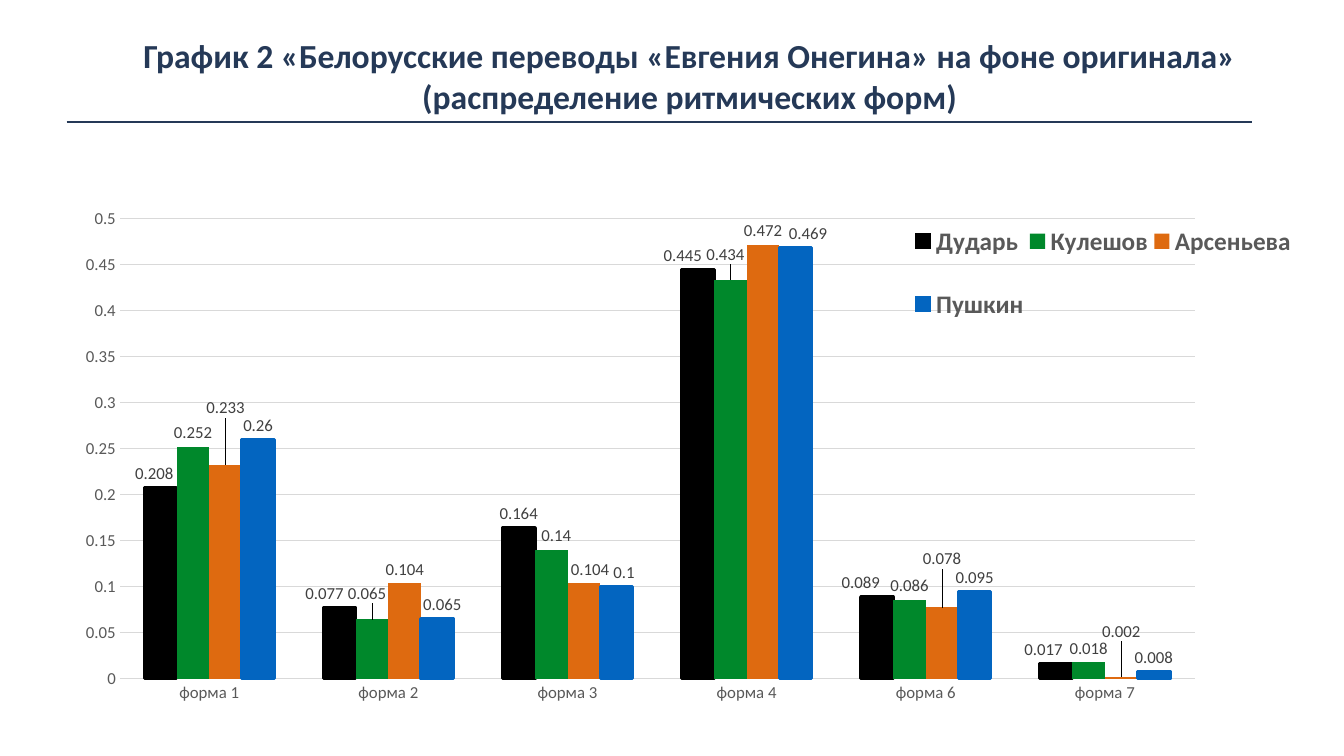
from pptx import Presentation, oxml, util as u
from pptx.chart.data import CategoryChartData
from pptx.dml.color import RGBColor
from pptx.enum import chart as ce, shapes, text
from pptx.oxml import ns

INK = {"navy": "253957", "black": "000000", "green": "00882B",
       "orange": "DE6A10", "blue": "0365C0", "grid": "D9D9D9",
       "axis": "595959", "label": "404040"}
HEAD = ("График 2 «Белорусские переводы «Евгения Онегина» на фоне оригинала»",
        "(распределение ритмических форм)")
FORMS = [f"форма {n}" for n in (1, 2, 3, 4, 6, 7)]
ROWS = (
    ("Дударь", "black", True, (0.208, 0.077, 0.164, 0.445, 0.089, 0.017)),
    ("Кулешов", "green", False, (0.252, 0.065, 0.14, 0.434, 0.086, 0.018)),
    ("Арсеньева", "orange", False, (0.233, 0.104, 0.104, 0.472, 0.078, 0.002)),
    ("Пушкин", "blue", True, (0.26, 0.065, 0.1, 0.469, 0.095, 0.008)),
)
MOVES = {
    "Дударь": {0: (-0.005, 0), 1: (-0.012, 0), 3: (-0.012, 0),
               4: (-0.013, 0), 5: (-0.01, 0)},
    "Кулешов": {1: (-0.004, -0.02), 2: (0.004, 0), 3: (-0.004, -0.02)},
    "Арсеньева": {0: (0, -0.075), 2: (0.005, 0), 4: (0, -0.06),
                  5: (0, -0.055)},
    "Пушкин": {1: (0.004, 0), 2: (0.006, 0), 3: (0.01, 0)},
}


def put(obj, **vals):
    """Set each named attribute on the object."""
    for key, val in vals.items():
        setattr(obj, key, val)


def inch(*nums):
    """Turn plain numbers into lengths."""
    return [u.Inches(n) for n in nums]


def tint(name):
    """Look up a colour by name."""
    return RGBColor.from_string(INK[name])


def style(font, size, ink, bold=False):
    """Format a font."""
    put(font, size=u.Pt(size), bold=bold, name="Calibri")
    font.color.rgb = tint(ink)


def stroke(line, ink, width):
    """Format a line."""
    line.color.rgb = tint(ink)
    line.width = u.Pt(width)


def layout(node, spot, **vals):
    """Give a chart part a manual layout at a child index."""
    for old in node.findall(ns.qn("c:layout")):
        node.remove(old)
    tags = "".join(f'<c:{k} val="{v}"/>' for k, v in vals.items())
    node.insert(spot, oxml.parse_xml(
        f'<c:layout {ns.nsdecls("c")}><c:manualLayout>{tags}'
        '</c:manualLayout></c:layout>'))


def title(slide, left, top, width, height):
    """Place the two-line heading in the title placeholder."""
    head = slide.shapes.title
    box = inch(left, top, width, height)
    put(head, **dict(zip(("left", "top", "width", "height"), box)))
    frame = head.text_frame
    frame.text = "\n".join(HEAD)
    put(frame, word_wrap=True, auto_size=text.MSO_AUTO_SIZE.NONE,
        vertical_anchor=text.MSO_ANCHOR.TOP)
    for side in ("left", "right", "top", "bottom"):
        setattr(frame, f"margin_{side}", u.Inches(0.04))
    for para in frame.paragraphs:
        put(para, alignment=text.PP_ALIGN.CENTER, space_before=u.Pt(0))
        style(para.runs[0].font, 24, "navy", True)


def rule(slide, left, top, width):
    """Draw the line under the heading."""
    line = slide.shapes.add_connector(
        shapes.MSO_CONNECTOR.STRAIGHT, *inch(left, top, left + width, top))
    stroke(line.line, "navy", 1.5)
    line._element.spPr.append(
        oxml.parse_xml(f'<a:effectLst {ns.nsdecls("a")}/>'))


def axes(chart):
    """Format both axes and the grid."""
    for axis in (chart.category_axis, chart.value_axis):
        put(axis, major_tick_mark=ce.XL_TICK_MARK.NONE,
            minor_tick_mark=ce.XL_TICK_MARK.NONE)
        style(axis.tick_labels.font, 12, "axis")
    stroke(chart.category_axis.format.line, "grid", 0.75)
    put(axis, minimum_scale=0, maximum_scale=0.5, major_unit=0.05)
    axis.format.line.fill.background()
    stroke(axis.major_gridlines.format.line, "grid", 0.75)


def bars(plot):
    """Colour the series and set their labels clear of each other."""
    put(plot, gap_width=150, overlap=0, vary_by_categories=False)
    for ser, (name, ink, edge, _) in zip(plot.series, ROWS):
        ser.format.fill.solid()
        ser.format.fill.fore_color.rgb = tint(ink)
        if edge:
            stroke(ser.format.line, ink, 2.25)
        put(ser.data_labels, show_value=True,
            position=ce.XL_LABEL_POSITION.OUTSIDE_END)
        style(ser.data_labels.font, 12, "label")
        for spot, (x, y) in MOVES[name].items():
            label = ser.points[spot].data_label
            label.position = ce.XL_LABEL_POSITION.OUTSIDE_END
            style(label.font, 12, "label")
            node = ser.data_labels._element.xpath(
                f'c:dLbl[c:idx/@val="{spot}"]')[0]
            layout(node, 1, x=x, y=y)


def graph(slide, *box):
    """Place the column chart with its legend."""
    data = CategoryChartData()
    data.categories = FORMS
    for name, _, _, vals in ROWS:
        data.add_series(name, vals)
    chart = slide.shapes.add_chart(
        ce.XL_CHART_TYPE.COLUMN_CLUSTERED, *inch(*box), data).chart
    put(chart, has_title=False, has_legend=True)
    style(chart.font, 10, "black")
    axes(chart)
    bars(chart.plots[0])
    area = chart._chartSpace.chart.plotArea
    layout(area, 0, layoutTarget="inner", xMode="edge", yMode="edge",
           x=0.049, y=0.125, w=0.859, h=0.812)
    key = chart.legend
    put(key, position=ce.XL_LEGEND_POSITION.BOTTOM, include_in_layout=False)
    style(key.font, 18, "axis", True)
    layout(key._element, 1, xMode="edge", yMode="edge",
           x=0.68, y=0.08, w=0.31, h=0.28)


def main():
    """Build and save the slide."""
    deck = Presentation()
    put(deck, slide_width=u.Inches(13.33), slide_height=u.Inches(7.5))
    slide = deck.slides.add_slide(deck.slide_layouts[5])
    title(slide, 0.96, 0.31, 11.76, 0.72)
    rule(slide, 0.66, 1.21, 11.76)
    graph(slide, 0.58, 1.47, 12.41, 5.62)
    deck.save("out.pptx")


if __name__ == "__main__":
    main()
